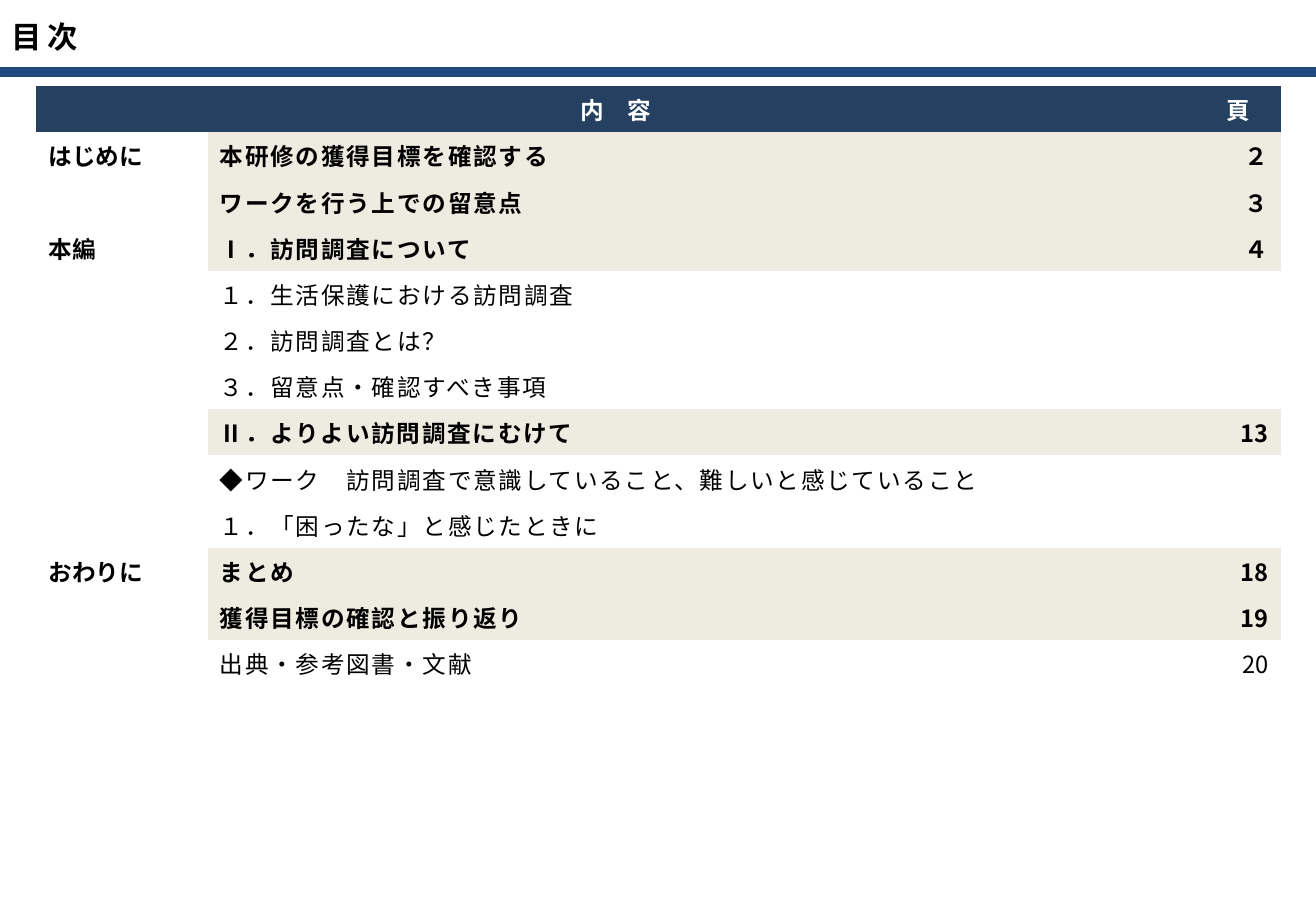
from lxml import etree
from pptx import Presentation
from pptx.dml.color import RGBColor
from pptx.enum import shapes, text
from pptx.oxml import ns
from pptx.util import Inches, Pt

FONT = "Noto Sans CJK JP"
COLORS = {"rule": "1F497D", "header": "254061", "section": "EEECE1",
          "black": "000000", "white": "FFFFFF"}
NO_STYLE_NO_GRID = "{2D5ABB26-0587-4C30-8999-92F81FD0307C}"
COLUMN_WIDTHS = (1.41, 8.13, 0.7)
ROW_HEIGHT = 0.38
BODY_SIZE = 14

# part, content, page, is a section heading
CONTENTS = [
    ("はじめに", "本研修の獲得目標を確認する", "２", True),
    ("", "ワークを行う上での留意点", "３", True),
    ("本編", "Ⅰ．訪問調査について", "４", True),
    ("", "１．生活保護における訪問調査", "", False),
    ("", "２．訪問調査とは？", "", False),
    ("", "３．留意点・確認すべき事項", "", False),
    ("", "Ⅱ．よりよい訪問調査にむけて", "13", True),
    ("", "◆ワーク　訪問調査で意識していること、難しいと感じていること", "", False),
    ("", "１．「困ったな」と感じたときに", "", False),
    ("おわりに", "まとめ", "18", True),
    ("", "獲得目標の確認と振り返り", "19", True),
    ("", "出典・参考図書・文献", "20", False),
]


def write_text(frame, content, size=BODY_SIZE, color="black", bold=True,
               spacing=0, align=text.PP_ALIGN.LEFT):
    """Write one formatted paragraph; an empty one only keeps its text size."""
    paragraph = frame.paragraphs[0]
    paragraph.alignment = align
    if not content:
        end = etree.SubElement(paragraph._p, ns.qn("a:endParaRPr"))
        end.set("sz", str(size * 100))
        return
    run = paragraph.add_run()
    run.text = content
    run.font.size = Pt(size)
    run.font.bold = bold
    run.font.name = FONT
    run.font.color.rgb = RGBColor.from_string(COLORS[color])
    properties = run.font._element
    properties.set("spc", str(spacing * 100))
    etree.SubElement(properties, ns.qn("a:ea")).set("typeface", FONT)


def add_title(slide, content, width):
    box = slide.shapes.add_textbox(0, 0, width, Inches(0.59))
    box.text_frame.word_wrap = True
    box.text_frame.vertical_anchor = text.MSO_ANCHOR.MIDDLE
    write_text(box.text_frame, content, size=18, spacing=3)


def add_rule(slide, top, width):
    line = slide.shapes.add_connector(
        shapes.MSO_CONNECTOR.STRAIGHT, 0, top, width, top)
    line.line.color.rgb = RGBColor.from_string(COLORS["rule"])
    line.line.width = Pt(6)
    etree.SubElement(line._element.spPr, ns.qn("a:effectLst"))


def fill_cell(cell, content, fill=None, **text_format):
    cell.vertical_anchor = text.MSO_ANCHOR.MIDDLE
    if fill:
        cell.fill.solid()
        cell.fill.fore_color.rgb = RGBColor.from_string(COLORS[fill])
    else:
        cell.fill.background()
    write_text(cell.text_frame, content, **text_format)


def add_contents_table(slide):
    row_count = len(CONTENTS) + 1
    frame = slide.shapes.add_table(
        row_count, len(COLUMN_WIDTHS), Inches(0.3), Inches(0.71),
        Inches(sum(COLUMN_WIDTHS)), Inches(ROW_HEIGHT * row_count))
    table = frame.table
    table.first_row = table.horz_banding = False
    table._tbl.tblPr.find(ns.qn("a:tableStyleId")).text = NO_STYLE_NO_GRID
    for column, width in zip(table.columns, COLUMN_WIDTHS):
        column.width = Inches(width)
    for row in table.rows:
        row.height = Inches(ROW_HEIGHT)

    table.cell(0, 0).merge(table.cell(0, 1))
    for column, heading in ((0, "内　容"), (2, "頁")):
        fill_cell(table.cell(0, column), heading, fill="header",
                  color="white", align=text.PP_ALIGN.CENTER)
    for row, (part, content, page, is_section) in enumerate(CONTENTS, start=1):
        fill = "section" if is_section else None
        fill_cell(table.cell(row, 0), part)
        fill_cell(table.cell(row, 1), content, fill, bold=is_section, spacing=1)
        fill_cell(table.cell(row, 2), page, fill, bold=is_section,
                  align=text.PP_ALIGN.RIGHT)


def main():
    presentation = Presentation()
    presentation.slide_width = Inches(10.83)
    presentation.slide_height = Inches(7.5)
    slide = presentation.slides.add_slide(presentation.slide_layouts[6])
    add_rule(slide, Inches(0.59), presentation.slide_width)
    add_title(slide, "目次", presentation.slide_width)
    add_contents_table(slide)
    presentation.save("out.pptx")


if __name__ == "__main__":
    main()
